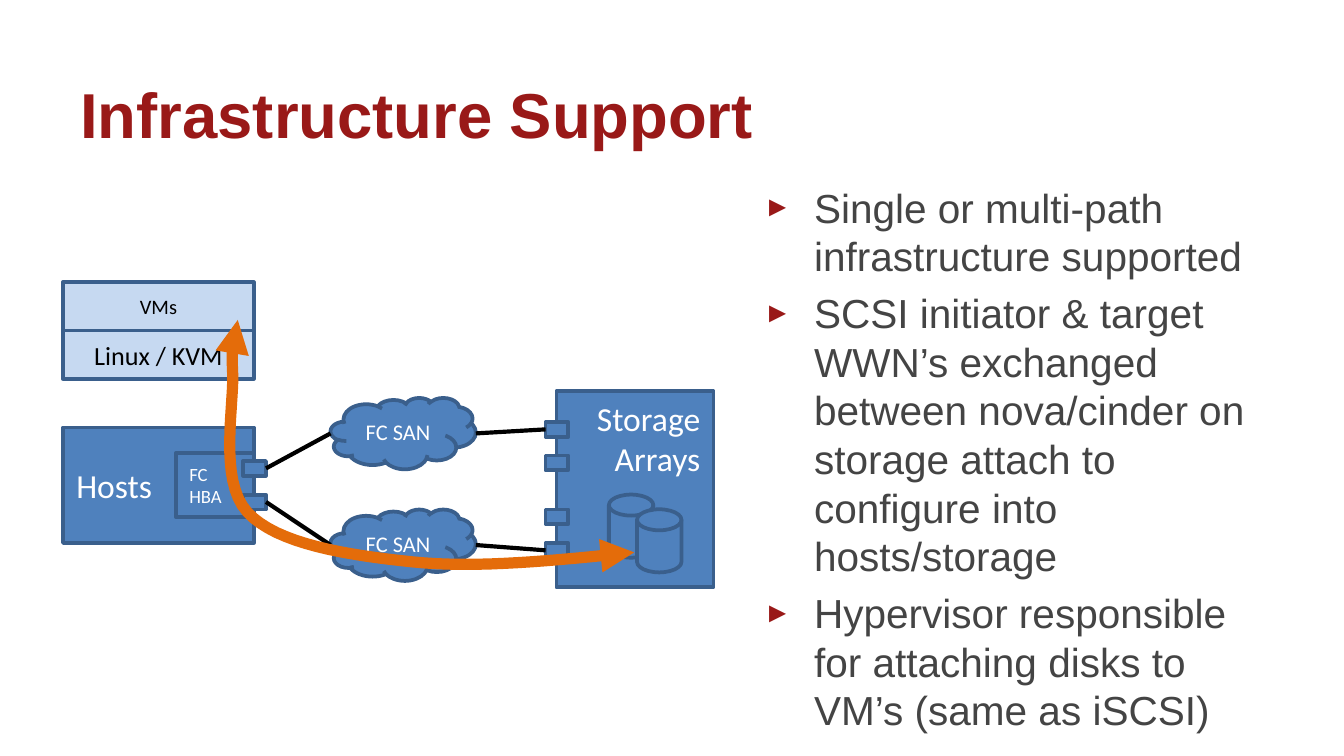
from dataclasses import dataclass

from lxml import etree
from pptx import Presentation
from pptx.dml.color import RGBColor
from pptx.enum import shapes, text
from pptx.oxml import ns
from pptx.util import Pt

COLORS = {
    "title": "991918",
    "body": "444444",
    "hardware": "4F81BD",
    "software": "C6D9F1",
    "outline": "3A5F8C",
    "link": "000000",
    "path": "E46C0A",
    "light": "FFFFFF",
    "dark": "000000",
}
RECT = shapes.MSO_SHAPE.RECTANGLE
CLOUD = shapes.MSO_SHAPE.CLOUD
DISK = shapes.MSO_SHAPE.FLOWCHART_MAGNETIC_DISK
LEFT, CENTER, RIGHT = text.PP_ALIGN.LEFT, text.PP_ALIGN.CENTER, text.PP_ALIGN.RIGHT
TOP, MIDDLE = text.MSO_ANCHOR.TOP, text.MSO_ANCHOR.MIDDLE
LEFT_SIDE, RIGHT_SIDE = 1, 3
PORT_SIZE = (12.2, 7.9)
CLOUD_SIZE = (77.8, 38.2)
DISK_SIZE = (23.8, 33.8)
LAYER_SIZE = (102.2, 25.9)


@dataclass
class Part:
    left: float
    top: float
    width: float
    height: float
    kind: int = RECT
    fill: str = "hardware"
    label: str = ""
    size: float = 12
    align: int = CENTER
    anchor: int = MIDDLE
    color: str = "light"


def rgb(name: str) -> RGBColor:
    return RGBColor.from_string(COLORS[name])


def add_bullet(paragraph) -> None:
    properties = paragraph._p.get_or_add_pPr()
    properties.set("marL", str(Pt(27)))
    properties.set("indent", str(-Pt(27)))
    color = etree.SubElement(properties, ns.qn("a:buClr"))
    etree.SubElement(color, ns.qn("a:srgbClr"), val=COLORS["title"])
    etree.SubElement(properties, ns.qn("a:buSzPct"), val="70000")
    etree.SubElement(properties, ns.qn("a:buFont"), typeface="Arial")
    etree.SubElement(properties, ns.qn("a:buChar"), char="►")


def write(frame, content: str, *, size: float, color: str, font: str = "Calibri",
          bold: bool = False, align: int = LEFT, anchor: int = TOP,
          bullets: bool = False, gap: float = 0) -> None:
    """Fill a text frame with one paragraph per line of content."""
    frame.word_wrap = True
    frame.vertical_anchor = anchor
    for index, line in enumerate(content.split("\n")):
        paragraph = frame.paragraphs[0] if index == 0 else frame.add_paragraph()
        if bullets:
            add_bullet(paragraph)
        paragraph.text = line
        paragraph.alignment = align
        if index and gap:
            paragraph.space_before = Pt(gap)
        paragraph.font.size = Pt(size)
        paragraph.font.name = font
        paragraph.font.bold = bold
        paragraph.font.color.rgb = rgb(color)


def draw_part(slide, part: Part):
    shape = slide.shapes.add_shape(part.kind, Pt(part.left), Pt(part.top),
                                   Pt(part.width), Pt(part.height))
    shape.shadow.inherit = False
    shape.fill.solid()
    shape.fill.fore_color.rgb = rgb(part.fill)
    shape.line.color.rgb = rgb("outline")
    shape.line.width = Pt(2)
    if part.label:
        write(shape.text_frame, part.label, size=part.size, color=part.color,
              align=part.align, anchor=part.anchor)
    return shape


def draw_link(slide, port, side: int, cloud_point: tuple[float, float]) -> None:
    """Join one side of a port to a point on a cloud's edge."""
    x, y = (Pt(value) for value in cloud_point)
    link = slide.shapes.add_connector(shapes.MSO_CONNECTOR.STRAIGHT, x, y, x, y)
    link.begin_connect(port, side)
    link.line.color.rgb = rgb("link")
    link.line.width = Pt(2.25)
    etree.SubElement(link._element.spPr, ns.qn("a:effectLst"))


def bezier_points(start, curves, steps: int = 16) -> list[tuple[float, float]]:
    """Sample a chain of cubic curves, each given as two controls and an end."""
    points = [start]
    for first, second, end in curves:
        for step in range(1, steps + 1):
            t = step / steps
            weights = ((1 - t) ** 3, 3 * t * (1 - t) ** 2, 3 * t * t * (1 - t), t ** 3)
            corners = (start, first, second, end)
            points.append(tuple(sum(w * c[axis] for w, c in zip(weights, corners))
                                for axis in (0, 1)))
        start = end
    return points


def draw_data_path(slide) -> None:
    start, *rest = bezier_points((339.8, 295.9), [
        ((298.1, 300.2), (255.6, 304.6), (221, 301)),
        ((186.5, 297.4), (148.3, 291.6), (132.5, 274.3)),
        ((116.6, 257), (126, 214.6), (124.6, 198)),
        ((123.8, 180.7), (126, 175.7), (127.4, 171.4)),
    ])
    builder = slide.shapes.build_freeform(Pt(start[0]), Pt(start[1]))
    builder.add_line_segments([(Pt(x), Pt(y)) for x, y in rest], close=False)
    data_path = builder.convert_to_shape()
    data_path.shadow.inherit = False
    data_path.fill.background()
    data_path.line.color.rgb = rgb("path")
    data_path.line.width = Pt(6)
    outline = data_path.line._get_or_add_ln()
    etree.SubElement(outline, ns.qn("a:round"))
    for end in ("a:headEnd", "a:tailEnd"):
        etree.SubElement(outline, ns.qn(end), type="triangle")


def draw_diagram(slide) -> None:
    draw_part(slide, Part(33.8, 229, 102.2, 61.9, label="Hosts", size=18, align=LEFT))
    draw_part(slide, Part(94.3, 242.6, 41.8, 34.6, label="FC\nHBA", size=10, align=LEFT))
    host_ports = [draw_part(slide, Part(130.3, top, *PORT_SIZE)) for top in (247, 265)]

    clouds = [Part(177.1, top, *CLOUD_SIZE, kind=CLOUD, label="FC SAN")
              for top in (213.1, 272.9)]
    for cloud in clouds:
        draw_part(slide, cloud)
    for port, cloud in zip(host_ports, clouds):
        draw_link(slide, port, RIGHT_SIDE, (cloud.left, cloud.top + cloud.height / 2))

    draw_part(slide, Part(298.1, 209.5, 84.2, 105.1, label="Storage Arrays", size=18,
                          align=RIGHT, anchor=TOP))
    storage_ports = [draw_part(slide, Part(292.3, top, *PORT_SIZE))
                     for top in (226.1, 244.1, 272.9, 290.9)]
    for port, cloud in zip((storage_ports[0], storage_ports[-1]), clouds):
        draw_link(slide, port, LEFT_SIDE,
                  (cloud.left + cloud.width, cloud.top + cloud.height / 2))

    draw_part(slide, Part(326.2, 265, *DISK_SIZE, kind=DISK))
    for label, size, top in (("Linux / KVM", 14, 177.1), ("VMs", 11, 151.2)):
        draw_part(slide, Part(33.8, top, *LAYER_SIZE, fill="software", label=label,
                              size=size, color="dark"))
    draw_data_path(slide)
    draw_part(slide, Part(341.3, 272.9, *DISK_SIZE, kind=DISK))


def main() -> None:
    deck = Presentation()
    deck.slide_width, deck.slide_height = Pt(720), Pt(405)
    slide = deck.slides.add_slide(deck.slide_layouts[6])

    title = slide.shapes.add_textbox(Pt(36), Pt(27), Pt(648), Pt(67.7))
    write(title.text_frame, "Infrastructure Support", size=34, color="title",
          font="Arial", bold=True, anchor=MIDDLE)
    points = slide.shapes.add_textbox(Pt(402), Pt(94.3), Pt(282.2), Pt(267.1))
    write(points.text_frame,
          "Single or multi-path infrastructure supported\n"
          "SCSI initiator & target WWN’s exchanged between nova/cinder on "
          "storage attach to configure into hosts/storage\n"
          "Hypervisor responsible for attaching disks to VM’s (same as iSCSI)",
          size=21.7, color="body", font="Arial", bullets=True, gap=4.4)
    draw_diagram(slide)
    deck.save("out.pptx")


if __name__ == "__main__":
    main()
